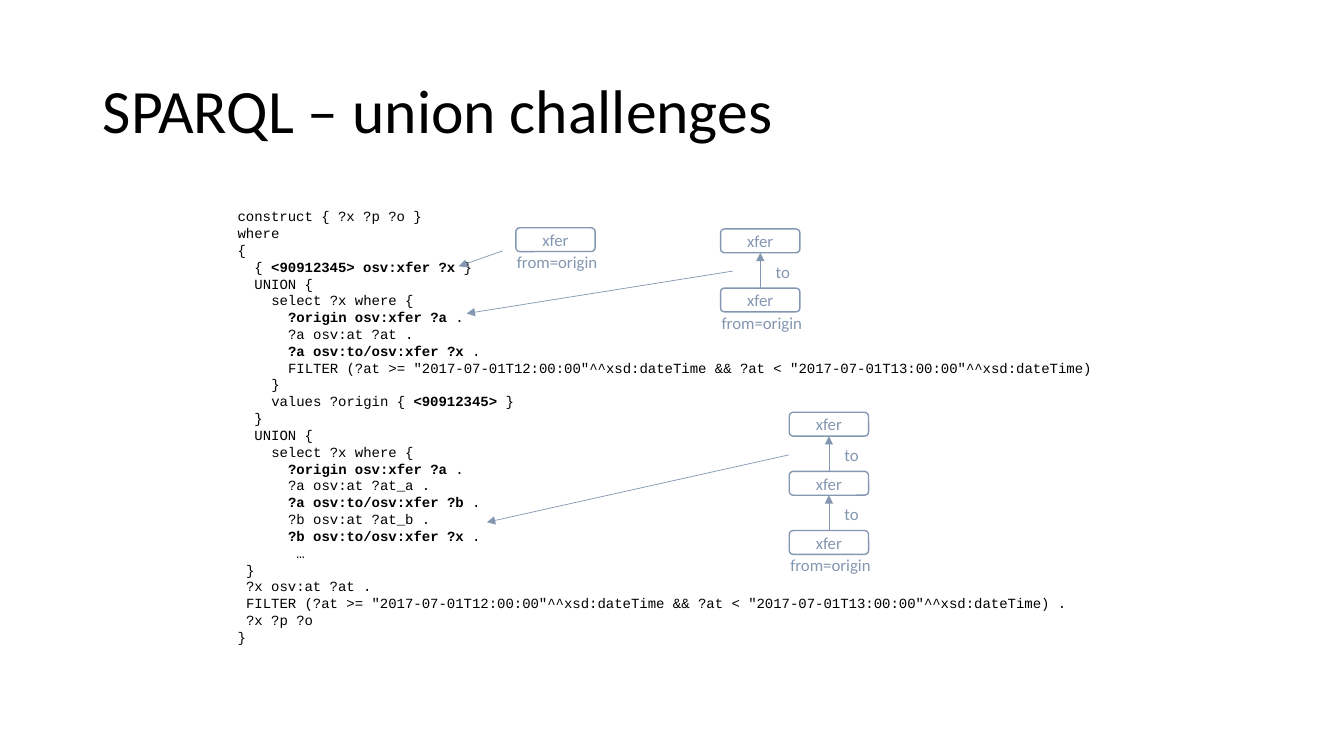
"""Build a slide on the challenges of SPARQL unions."""
import pptx
import pptx.util
import pptx.dml.color
import pptx.enum.shapes
import pptx.enum.text
import pptx.oxml.ns
import lxml.etree

Cm = pptx.util.Cm
Pt = pptx.util.Pt
ALIGN = pptx.enum.text.PP_ALIGN
ANCHOR = pptx.enum.text.MSO_ANCHOR

TITLE = "SPARQL – union challenges"

# Each line is its indent in characters and its text, with bold parts between stars.
CODE = [
    (0, "construct { ?x ?p ?o }"),
    (0, "where"),
    (0, "{"),
    (2, "{ *<90912345> osv:xfer ?x *}"),
    (2, "UNION {"),
    (4, "select ?x where {"),
    (6, "*?origin osv:xfer ?a *."),
    (6, "?a osv:at ?at ."),
    (6, "*?a osv:to/osv:xfer ?x *."),
    (6, 'FILTER (?at >= "2017-07-01T12:00:00"^^xsd:dateTime && ?at < "2017-07-01T13:00:00"^^xsd:dateTime)'),
    (4, "}"),
    (4, "values ?origin { *<90912345> *}"),
    (2, "}"),
    (2, "UNION {"),
    (4, "select ?x where {"),
    (6, "*?origin osv:xfer ?a *."),
    (6, "?a osv:at ?at_a ."),
    (6, "*?a osv:to/osv:xfer ?b *."),
    (6, "?b osv:at ?at_b ."),
    (6, "*?b osv:to/osv:xfer ?x *."),
    (7, "…"),
    (1, "}"),
    (1, "?x osv:at ?at ."),
    (1, 'FILTER (?at >= "2017-07-01T12:00:00"^^xsd:dateTime && ?at < "2017-07-01T13:00:00"^^xsd:dateTime) .'),
    (1, "?x ?p ?o"),
    (0, "}"),
]

CHAINS = [
    {"left": 13, "top": 5.74, "count": 1, "arrow": (12.67, 6.32, 11.56, 6.71)},
    {"left": 18.16, "top": 5.77, "count": 2, "arrow": (18.47, 6.83, 11.76, 7.9)},
    {"left": 19.89, "top": 10.39, "count": 3, "arrow": (19.89, 11.46, 12.27, 13.16)},
]
NODE, LINK, START = "xfer", "to", "from=origin"

THEME = {
    "ink": "000000", "steel": "8497B0", "white": "FFFFFF",
    "sans": "Calibri", "mono": "Courier New",
    "title": 44, "code": 10, "label": 12, "edge": 1, "thin": 0.5,
}
BOX_W, BOX_H, PITCH = 2.0, 0.6, 1.49
TEXT_H = 0.76
CHAR_W = 0.6 * THEME["code"]


def tint(name):
    return pptx.dml.color.RGBColor.from_string(THEME[name])


def style(run, size, face, ink, bold=False):
    run.font.size = Pt(THEME[size])
    run.font.name = THEME[face]
    run.font.color.rgb = tint(ink)
    run.font.bold = bold


def add_text(slide, area, text, size, ink, align=ALIGN.LEFT):
    box = slide.shapes.add_textbox(*map(Cm, area))
    frame = box.text_frame
    frame.word_wrap = True
    frame.text = text
    frame.paragraphs[0].alignment = align
    style(frame.paragraphs[0].runs[0], size, "sans", ink)
    return frame


def add_code(slide):
    frame = slide.shapes.add_textbox(Cm(5.74), Cm(5.11), Cm(22.4), Cm(11.79)).text_frame
    frame.word_wrap = True
    for row, (indent, line) in enumerate(CODE):
        para = frame.add_paragraph() if row else frame.paragraphs[0]
        para._p.get_or_add_pPr().set("marL", str(int(Pt(indent * CHAR_W))))
        for part, text in enumerate(line.split("*")):
            if text:
                run = para.add_run()
                run.text = text
                style(run, "code", "mono", "ink", part % 2 == 1)


def add_box(slide, left, top):
    kind = pptx.enum.shapes.MSO_SHAPE.ROUNDED_RECTANGLE
    box = slide.shapes.add_shape(kind, Cm(left), Cm(top), Cm(BOX_W), Cm(BOX_H))
    box.shadow.inherit = False
    box.fill.solid()
    box.fill.fore_color.rgb = tint("white")
    box.line.color.rgb = tint("steel")
    box.line.width = Pt(THEME["edge"])
    frame = box.text_frame
    frame.text = NODE
    frame.vertical_anchor = ANCHOR.MIDDLE
    frame.paragraphs[0].alignment = ALIGN.CENTER
    style(frame.paragraphs[0].runs[0], "label", "sans", "steel")
    return box


def add_arrow(slide, ends):
    kind = pptx.enum.shapes.MSO_CONNECTOR.STRAIGHT
    arrow = slide.shapes.add_connector(kind, *map(Cm, ends))
    arrow.line.color.rgb = tint("steel")
    arrow.line.width = Pt(THEME["thin"])
    name = pptx.oxml.ns.qn
    head = lxml.etree.SubElement(arrow.line._get_or_add_ln(), name("a:tailEnd"))
    head.set("type", "triangle")
    lxml.etree.SubElement(arrow._element.spPr, name("a:effectLst"))
    return arrow


def add_chain(slide, left, top, count, arrow):
    mid = left + BOX_W / 2
    tops = [top + PITCH * step for step in range(count)]
    boxes = [add_box(slide, left, place) for place in tops]
    for upper, lower, place in zip(boxes, boxes[1:], tops):
        link = add_arrow(slide, (mid, place + PITCH, mid, place + BOX_H))
        link.begin_connect(lower, 0)
        link.end_connect(upper, 2)
        add_text(slide, (mid + 0.14, place + 0.7, 1, TEXT_H), LINK, "label", "steel")
    add_text(slide, (mid - 1.36, tops[-1] + 0.49, 2.8, TEXT_H), START, "label", "steel", ALIGN.CENTER)
    add_arrow(slide, arrow)


def main():
    deck = pptx.Presentation()
    deck.slide_width, deck.slide_height = Cm(33.87), Cm(19.05)
    slide = deck.slides.add_slide(deck.slide_layouts[6])
    title = add_text(slide, (2.34, 1.02, 29.21, 3.68), TITLE, "title", "ink")
    title.vertical_anchor = ANCHOR.MIDDLE
    title.paragraphs[0].line_spacing = 0.9
    add_code(slide)
    for chain in CHAINS:
        add_chain(slide, **chain)
    deck.save("out.pptx")


if __name__ == "__main__":
    main()
